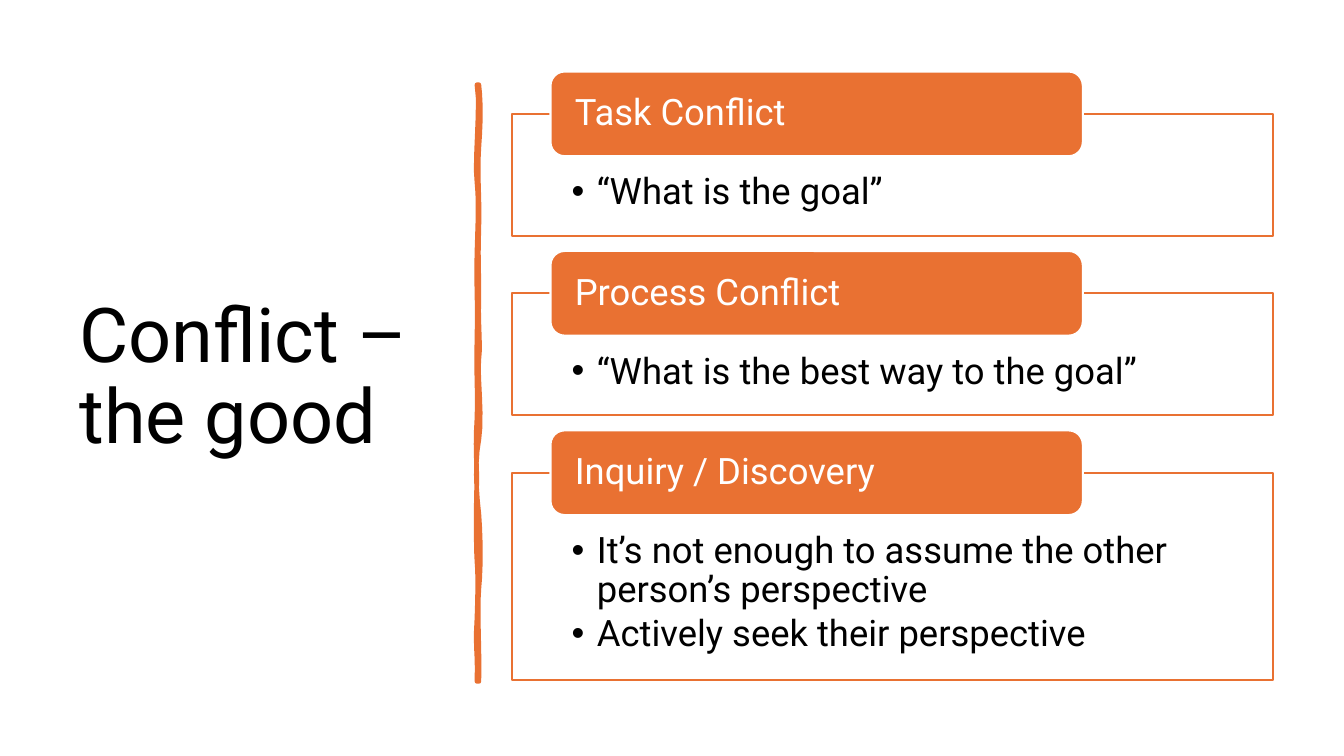
from lxml.etree import SubElement
from pptx import Presentation
from pptx.dml.color import RGBColor
from pptx.enum.shapes import MSO_SHAPE
from pptx.enum.text import MSO_ANCHOR, PP_ALIGN
from pptx.oxml.ns import qn
from pptx.util import Inches, Pt

TITLE = "Conflict – the good"
SECTIONS = [
    ("Task Conflict", ["“What is the goal”"], 1.21),
    ("Process Conflict", ["“What is the best way to the goal”"], 1.21),
    ("Inquiry / Discovery", [
        "It’s not enough to assume the other person’s perspective",
        "Actively seek their perspective",
    ], 2.06),
]
COLORS = {"accent": "E97132", "white": "FFFFFF", "black": "000000"}
FONT = "Roboto"
PANEL_LEFT, PANEL_TOP, PANEL_WIDTH, PANEL_GAP = 5.08, 1.13, 7.55, 0.57
LABEL_LEFT, LABEL_WIDTH, LABEL_HEIGHT, LABEL_RISE = 5.46, 5.28, 0.84, 0.42
BRUSH_START = (4.75, 0.84)
BRUSH_CURVES = [
    (4.77, 1.02, 4.77, 1.19, 4.75, 1.46), (4.73, 1.73, 4.76, 1.95, 4.75, 2.26),
    (4.74, 2.57, 4.75, 2.62, 4.75, 2.94), (4.74, 3.25, 4.77, 3.42, 4.75, 3.56),
    (4.73, 3.7, 4.79, 4.14, 4.75, 4.36), (4.71, 4.57, 4.72, 4.84, 4.75, 5.1),
    (4.77, 5.36, 4.77, 5.64, 4.75, 5.84), (4.73, 6.03, 4.76, 6.5, 4.75, 6.76),
    (4.74, 6.76, 4.73, 6.76, 4.73, 6.76), (4.74, 6.46, 4.71, 6.44, 4.73, 6.13),
    (4.74, 5.83, 4.74, 5.7, 4.73, 5.57), (4.72, 5.44, 4.72, 4.95, 4.73, 4.77),
    (4.73, 4.59, 4.71, 4.45, 4.73, 4.15), (4.74, 3.86, 4.72, 3.73, 4.73, 3.35),
    (4.74, 2.98, 4.72, 2.81, 4.73, 2.5), (4.74, 2.18, 4.75, 2, 4.73, 1.81),
    (4.7, 1.63, 4.77, 1.04, 4.73, 0.84),
]


def color(name):
    return RGBColor.from_string(COLORS[name])


def write(shape, lines, size=26, ink="black", anchor=MSO_ANCHOR.MIDDLE,
          margins=(0.1, 0.05, 0.1, 0.05), bullet=False, after=0):
    frame = shape.text_frame
    frame.word_wrap = True
    frame.vertical_anchor = anchor
    (frame.margin_left, frame.margin_top,
     frame.margin_right, frame.margin_bottom) = map(Inches, margins)
    for index, line in enumerate(lines):
        para = frame.add_paragraph() if index else frame.paragraphs[0]
        para.alignment = PP_ALIGN.LEFT
        para.line_spacing = 0.9
        para.space_after = Pt(after)
        if bullet:
            para.level = 1
            properties = para._p.get_or_add_pPr()
            properties.set("marL", str(Inches(0.25)))
            properties.set("indent", str(-Inches(0.25)))
            SubElement(properties, qn("a:buFont"), typeface="Arial")
            SubElement(properties, qn("a:buChar"), char="•")
        span = para.add_run()
        span.text = line
        span.font.name = FONT
        span.font.size = Pt(size)
        span.font.color.rgb = color(ink)


def paint(shape, fill, line, width):
    shape.shadow.inherit = False
    shape.fill.solid()
    shape.fill.fore_color.rgb = color(fill)
    shape.line.color.rgb = color(line)
    shape.line.width = Pt(width)


def trace(start, curves, steps=6):
    points = [start]
    for ax, ay, bx, by, x, y in curves:
        sx, sy = points[-1]
        for step in range(1, steps + 1):
            t = step / steps
            u = 1 - t
            weights = (u ** 3, 3 * u * u * t, 3 * u * t * t, t ** 3)
            points.append(tuple(
                sum(w * v for w, v in zip(weights, values))
                for values in ((sx, ax, bx, x), (sy, ay, by, y))
            ))
    return [(Inches(x), Inches(y)) for x, y in points]


def add_section(page, label_text, lines, top, height):
    panel = page.shapes.add_shape(
        MSO_SHAPE.RECTANGLE, Inches(PANEL_LEFT), Inches(top),
        Inches(PANEL_WIDTH), Inches(height))
    paint(panel, "white", "accent", 1.5)
    fill_color = panel.fill._xPr.find(qn("a:solidFill"))[0]
    SubElement(fill_color, qn("a:alpha"), val="90000")
    write(panel, lines, anchor=MSO_ANCHOR.TOP, bullet=True, after=3,
          margins=(0.59, 0.59, 0.59, 0.2))
    label = page.shapes.add_shape(
        MSO_SHAPE.ROUNDED_RECTANGLE, Inches(LABEL_LEFT), Inches(top - LABEL_RISE),
        Inches(LABEL_WIDTH), Inches(LABEL_HEIGHT))
    paint(label, "accent", "white", 1.5)
    write(label, [label_text], ink="white", margins=(0.2, 0, 0.2, 0))


def main():
    deck = Presentation()
    deck.slide_width, deck.slide_height = Inches(13.33), Inches(7.5)
    page = deck.slides.add_slide(deck.slide_layouts[6])

    title = page.shapes.add_textbox(
        Inches(0.69), Inches(0.7), Inches(3.74), Inches(6.11))
    write(title, [TITLE], size=54)

    points = trace(BRUSH_START, BRUSH_CURVES)
    builder = page.shapes.build_freeform(*points[0])
    builder.add_line_segments(points[1:], close=True)
    paint(builder.convert_to_shape(), "accent", "accent", 3.25)

    top = PANEL_TOP
    for label_text, lines, height in SECTIONS:
        add_section(page, label_text, lines, top, height)
        top += height + PANEL_GAP

    deck.save("out.pptx")


if __name__ == "__main__":
    main()
